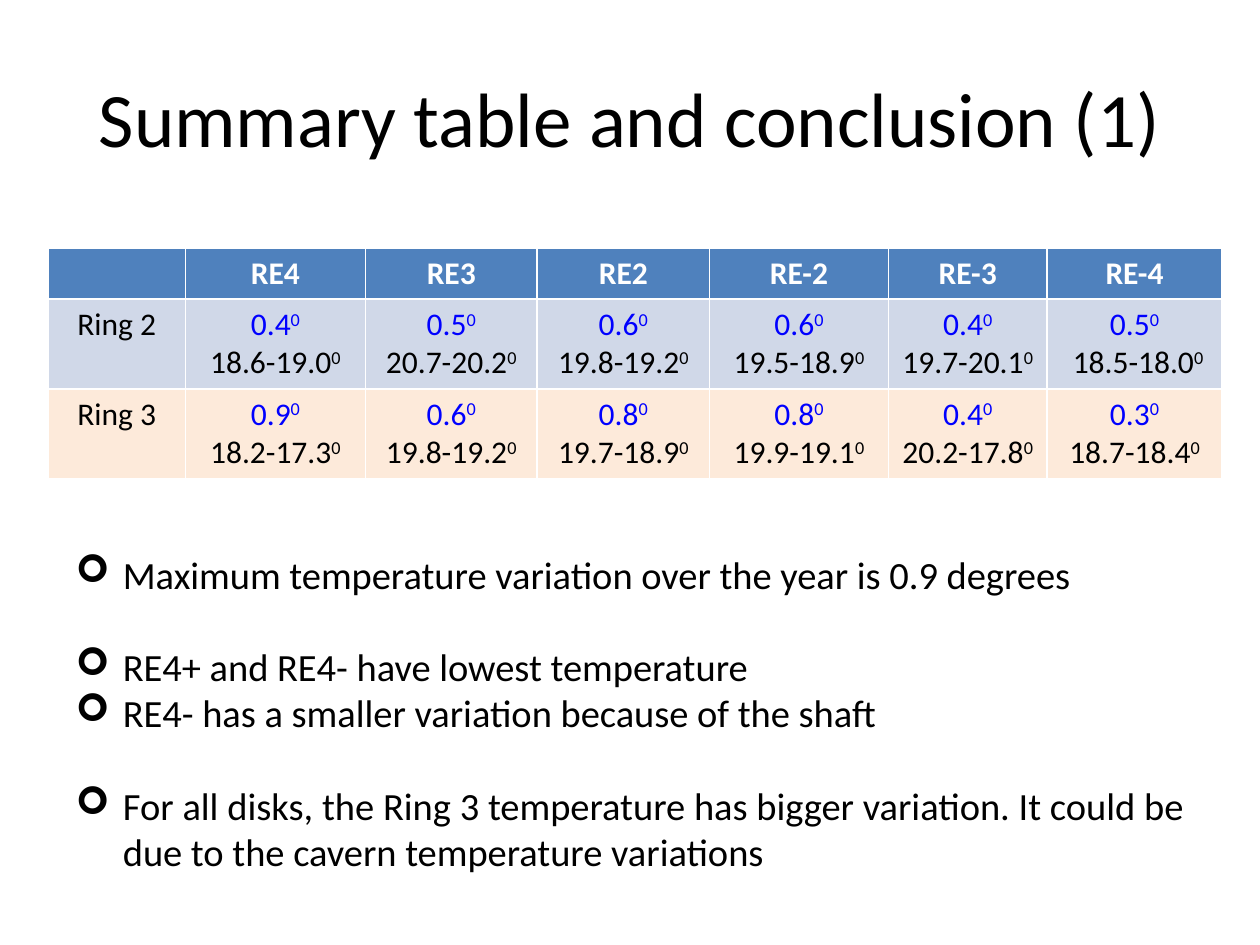
"""Build the ring temperature summary slide with its table and conclusions."""
from lxml import etree
from pptx import Presentation
from pptx.dml.color import RGBColor
from pptx.enum.text import MSO_AUTO_SIZE, PP_ALIGN
from pptx.oxml.ns import qn
from pptx.util import Pt

CENTER, JUSTIFY = PP_ALIGN.CENTER, PP_ALIGN.JUSTIFY
NO_AUTOFIT = MSO_AUTO_SIZE.NONE
COLORS = {
    "black": "000000",
    "white": "FFFFFF",
    "variation": "0000FF",
    "header": "4F81BD",
    "Ring 2": "D0D8E8",
    "Ring 3": "FDEADA",
}


def write(paragraph, text, size=18, color="black", bold=False, align=CENTER, superscript=False):
    paragraph.alignment = align
    run = paragraph.add_run()
    run.text = text
    run.font.name = "Calibri"
    run.font.size = Pt(size)
    run.font.bold = bold
    run.font.color.rgb = RGBColor.from_string(COLORS[color])
    if superscript:
        run._r.get_or_add_rPr().set("baseline", "30000")


def fill_cell(cell, color):
    cell.fill.solid()
    cell.fill.fore_color.rgb = RGBColor.from_string(COLORS[color])


deck = Presentation()
deck.slide_width, deck.slide_height = Pt(720), Pt(540)
slide = deck.slides.add_slide(deck.slide_layouts[1])

heading = slide.shapes.title
heading.left, heading.top, heading.width, heading.height = Pt(36), Pt(21.6), Pt(648), Pt(90)
write(heading.text_frame.paragraphs[0], "Summary table and conclusion (1)", size=44)

disks = ["", "RE4", "RE3", "RE2", "RE-2", "RE-3", "RE-4"]
rings = {
    "Ring 2": [("0.4", "18.6-19.0"), ("0.5", "20.7-20.2"), ("0.6", "19.8-19.2"),
               ("0.6", "19.5-18.9"), ("0.4", "19.7-20.1"), ("0.5", " 18.5-18.0")],
    "Ring 3": [("0.9", "18.2-17.3"), ("0.6", "19.8-19.2"), ("0.8", "19.7-18.9"),
               ("0.8", "19.9-19.1"), ("0.4", "20.2-17.8"), ("0.3", "18.7-18.4")],
}
column_widths = [78.5, 103, 98, 98.6, 102.2, 90.7, 100]
row_heights = [29, 51, 51]
temperatures = slide.shapes.add_table(
    len(row_heights), len(disks), Pt(27.4), Pt(141.8),
    Pt(sum(column_widths)), Pt(sum(row_heights))).table
for column, width in zip(temperatures.columns, column_widths):
    column.width = Pt(width)
for row, height in zip(temperatures.rows, row_heights):
    row.height = Pt(height)

for index, disk in enumerate(disks):
    header_cell = temperatures.cell(0, index)
    fill_cell(header_cell, "header")
    if disk:
        write(header_cell.text_frame.paragraphs[0], disk, color="white", bold=True)

for row_index, (ring, readings) in enumerate(rings.items(), start=1):
    ring_cell = temperatures.cell(row_index, 0)
    fill_cell(ring_cell, ring)
    write(ring_cell.text_frame.paragraphs[0], ring)
    for column_index, (variation, span) in enumerate(readings, start=1):
        reading_cell = temperatures.cell(row_index, column_index)
        fill_cell(reading_cell, ring)
        frame = reading_cell.text_frame
        lines = [(frame.paragraphs[0], variation, "variation"),
                 (frame.add_paragraph(), span, "black")]
        for line, degrees, color in lines:
            write(line, degrees, color=color)
            write(line, "0", color=color, superscript=True)

conclusions = [
    ("Maximum temperature variation over the year is 0.9 degrees", 0),
    ("RE4+ and RE4- have lowest temperature", 26.5),
    ("RE4- has a smaller variation because of the shaft", 0),
    ("For all disks, the Ring 3 temperature has bigger variation. It could be due to the "
     "cavern temperature variations", 26.5),
]
body = slide.placeholders[1]
body.left, body.top, body.width, body.height = Pt(36), Pt(311), Pt(648), Pt(220.3)
body.text_frame.auto_size = NO_AUTOFIT
for index, (conclusion, gap) in enumerate(conclusions):
    item = body.text_frame.add_paragraph() if index else body.text_frame.paragraphs[0]
    write(item, conclusion, size=22, align=JUSTIFY)
    item.space_before = Pt(gap)
    properties = item._p.get_or_add_pPr()
    properties.set("marL", str(Pt(27)))
    properties.set("indent", str(Pt(-27)))
    etree.SubElement(properties, qn("a:buFont"), typeface="Wingdings")
    etree.SubElement(properties, qn("a:buChar"), char="➢")

deck.save("out.pptx")
